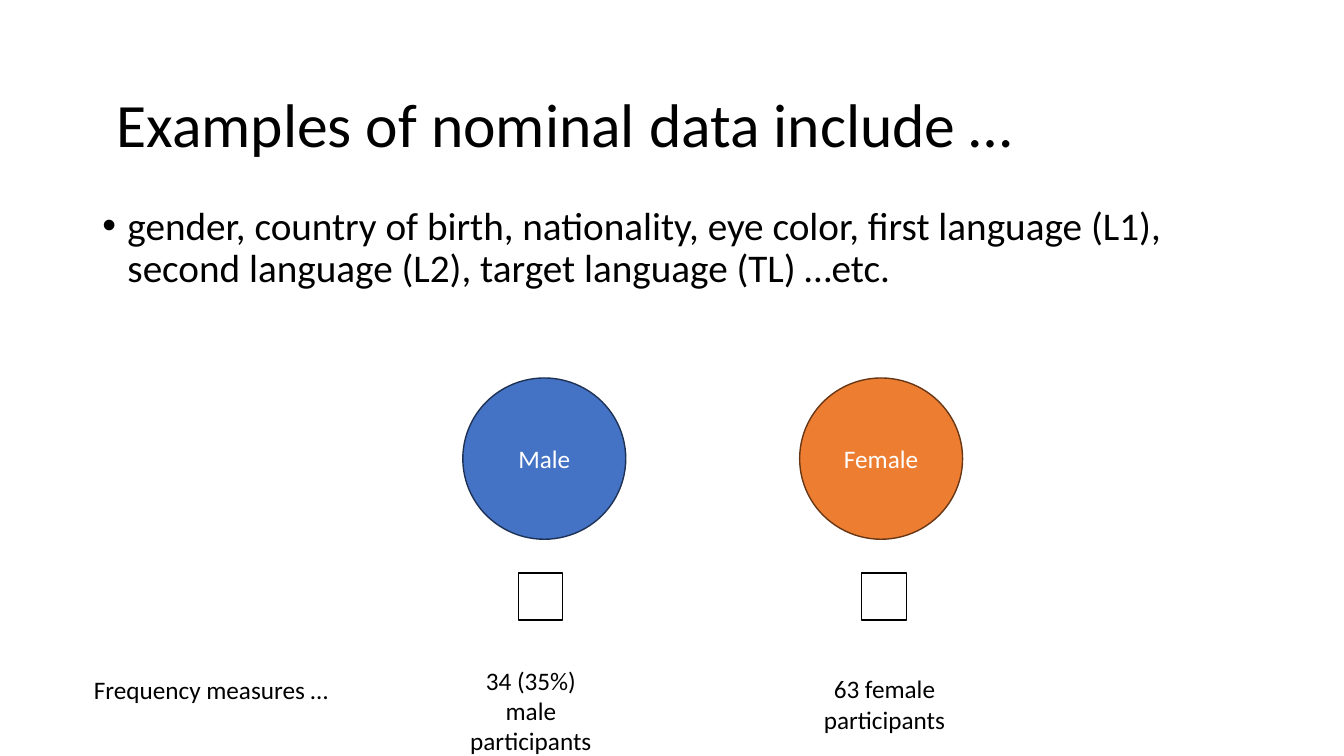
"""Build a slide giving examples of nominal data with frequency measures."""
import pptx
import pptx.dml.color
import pptx.enum.shapes
import pptx.enum.text
import pptx.oxml
import pptx.oxml.ns
import pptx.util

SHAPES = pptx.enum.shapes.MSO_SHAPE
ALIGN = pptx.enum.text.PP_ALIGN
ANCHOR = pptx.enum.text.MSO_ANCHOR
COLUMNS, ROWS = 160, 90
CELL = pptx.util.Inches(1) / 12
CENTERED = {"alignment": ALIGN.CENTER}

GROUPS = [
    {"label": "Male", "fill": "4472C4", "line": "1E3256", "circle": 55.1, "checkbox": 61.7,
     "measure": "34 (35%) male participants", "measure_box": (53.5, 78.6, 19.4, 12.1)},
    {"label": "Female", "fill": "ED7D31", "line": "683715", "circle": 95.2, "checkbox": 102.6,
     "measure": "63 female participants", "measure_box": (95.6, 79.6, 19.4, 8.5)},
]


def color(value):
    """Return the colour for a hex string."""
    return pptx.dml.color.RGBColor.from_string(value)


def place(*cells):
    """Turn grid columns and rows into slide lengths."""
    return [round(cell * CELL) for cell in cells]


def apply_format(target, values):
    """Set each attribute named in a dict of format values."""
    for name, value in values.items():
        setattr(target, name, value)


def write(shape, text, size=18, ink="000000", paragraph_format=None, frame_format=None):
    """Write one formatted paragraph into a shape and return it."""
    apply_format(shape.text_frame, {"word_wrap": True, **(frame_format or {})})
    paragraph = shape.text_frame.paragraphs[0]
    apply_format(paragraph, paragraph_format or {})
    run = paragraph.add_run()
    run.text = text
    apply_format(run.font, {"name": "Calibri", "size": pptx.util.Pt(size)})
    run.font.color.rgb = color(ink)
    return paragraph


def add_text(slide, box, text, **formats):
    """Add a wrapped text box and return its paragraph."""
    return write(slide.shapes.add_textbox(*place(*box)), text, **formats)


def add_outlined(slide, kind, box, fill, line):
    """Add a filled preset shape with a thin outline."""
    shape = slide.shapes.add_shape(kind, *place(*box))
    shape.shadow.inherit = False
    shape.fill.solid()
    shape.fill.fore_color.rgb = color(fill)
    shape.line.color.rgb = color(line)
    shape.line.width = pptx.util.Pt(1)
    return shape


def add_bullet(paragraph, indent):
    """Give a paragraph a round bullet with a hanging indent."""
    properties = paragraph._p.get_or_add_pPr()
    properties.set("marL", str(indent))
    properties.set("indent", str(-indent))
    namespace = pptx.oxml.ns.nsdecls("a")
    for tag in ('buFont {} typeface="Arial"', 'buChar {} char="•"'):
        properties.append(pptx.oxml.parse_xml(f"<a:{tag.format(namespace)}/>"))


def add_group(slide, group):
    """Add a category circle, its checkbox and its frequency measure."""
    circle = add_outlined(slide, SHAPES.OVAL, (group["circle"], 45, 19.4, 19.2),
                          group["fill"], group["line"])
    write(circle, group["label"], ink="FFFFFF", paragraph_format=CENTERED,
          frame_format={"vertical_anchor": ANCHOR.MIDDLE})
    add_outlined(slide, SHAPES.RECTANGLE, (group["checkbox"], 68.2, 5.3, 5.6),
                 "FFFFFF", "000000")
    add_text(slide, group["measure_box"], group["measure"], paragraph_format=CENTERED)


def main():
    """Build and save the slide."""
    presentation = pptx.Presentation()
    width, height = place(COLUMNS, ROWS)
    apply_format(presentation, {"slide_width": width, "slide_height": height})
    slide = presentation.slides.add_slide(presentation.slide_layouts[6])
    add_text(slide, (11, 4.8, 138, 17.4), "Examples of nominal data include …", size=44,
             paragraph_format={"line_spacing": 0.9},
             frame_format={"vertical_anchor": ANCHOR.MIDDLE,
                           "margin_left": pptx.util.Inches(0.24),
                           "margin_top": pptx.util.Inches(0.32)})
    examples = add_text(
        slide, (11, 24, 138, 57.1),
        "gender, country of birth, nationality, eye color, first language (L1), "
        "second language (L2), target language (TL) …etc.", size=28,
        paragraph_format={"line_spacing": 0.9, "space_before": pptx.util.Pt(10)})
    add_bullet(examples, pptx.util.Inches(0.25))
    for group in GROUPS:
        add_group(slide, group)
    add_text(slide, (10, 79.7, 32.2, 4.8), "Frequency measures …")
    presentation.save("out.pptx")


if __name__ == "__main__":
    main()
